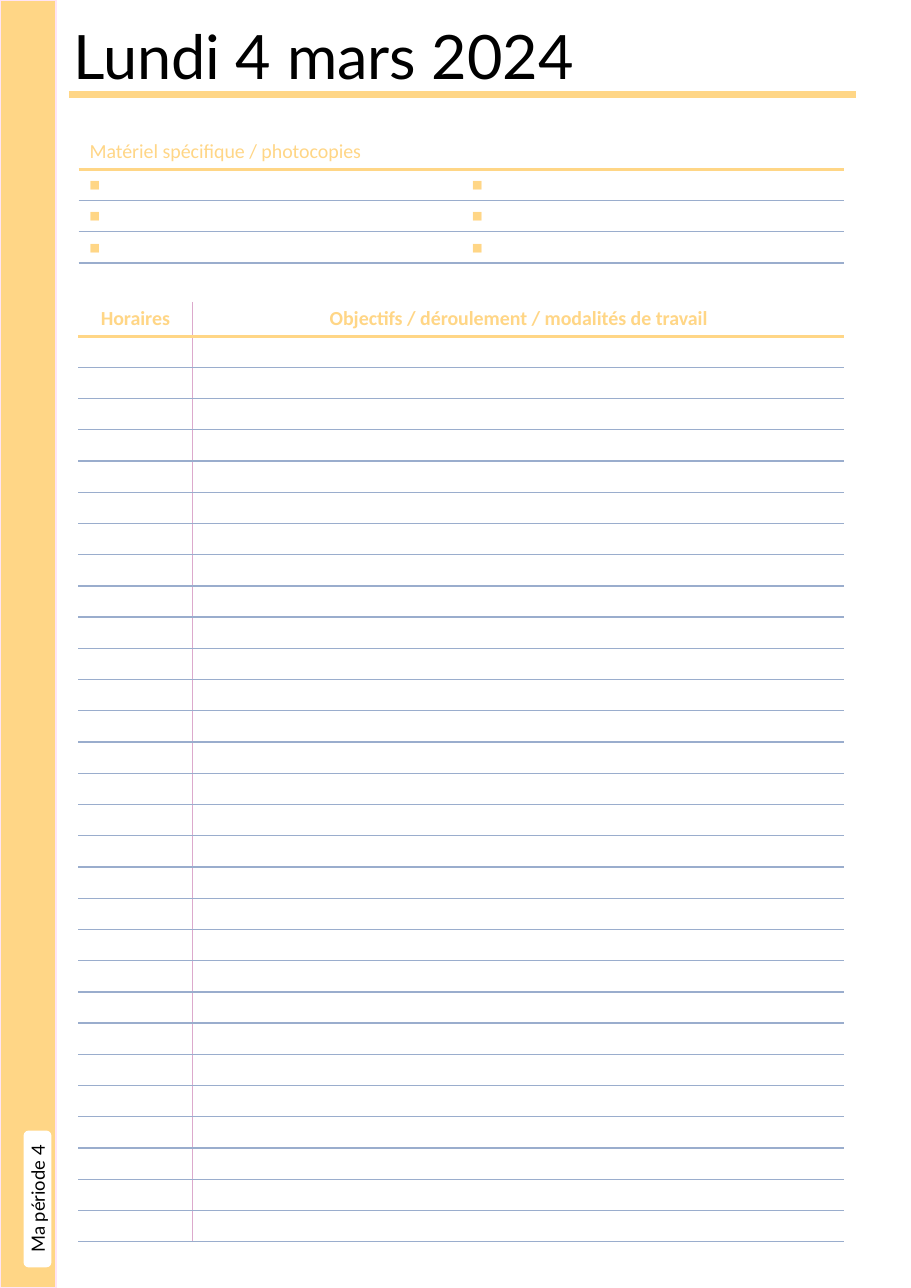
from lxml import etree
from pptx import Presentation
from pptx import util as u
from pptx.dml.color import RGBColor
from pptx.enum import shapes, text
from pptx.oxml import ns

COLORS = {
    "sand": "FFD686",
    "rule": "9AADCD",
    "margin": "DCA9CC",
    "blush": "FFE4F5",
    "white": "FFFFFF",
    "black": "000000",
}
HEADER_RULE = ("sand", 2.25)
ROW_RULE = ("rule", 1)
MARGIN_RULE = ("margin", 1)


def rgb(name):
    return RGBColor.from_string(COLORS[name])


class PlannerPage:
    def __init__(self, prs):
        self.s = prs.slides.add_slide(prs.slide_layouts[6])
        self.title_font = "Lato"
        self.table_font = "Calibri"

    def run(self, p, words, size, color, font, bold=False):
        r = p.add_run()
        r.text = words
        r.font.size = u.Pt(size)
        r.font.name = font
        r.font.bold = bold
        r.font.color.rgb = rgb(color)

    def title(self, words, *box):
        sp = self.s.shapes.add_textbox(*map(u.Pt, box))
        tf = sp.text_frame
        tf.word_wrap = True
        tf.auto_size = text.MSO_AUTO_SIZE.SHAPE_TO_FIT_TEXT
        self.run(tf.paragraphs[0], words, 40, "black", self.title_font)

    def line(self, x1, y1, x2, y2, color, width):
        cx = self.s.shapes.add_connector(
            shapes.MSO_CONNECTOR.STRAIGHT, *map(u.Pt, (x1, y1, x2, y2)))
        cx.line.color.rgb = rgb(color)
        cx.line.width = u.Pt(width)
        etree.SubElement(cx._element.spPr, ns.qn("a:effectLst"))

    def shape(self, kind, box, fill, line):
        sp = self.s.shapes.add_shape(kind, *map(u.Pt, box))
        sp.shadow.inherit = False
        sp.fill.solid()
        sp.fill.fore_color.rgb = rgb(fill)
        sp.line.color.rgb = rgb(line)
        sp.line.width = u.Pt(1)
        return sp

    def tab(self, words, box):
        sp = self.shape(shapes.MSO_SHAPE.ROUNDED_RECTANGLE, box, "white", "white")
        tf = sp.text_frame
        tf.margin_left = tf.margin_right = tf.margin_top = tf.margin_bottom = 0
        tf.vertical_anchor = text.MSO_ANCHOR.MIDDLE
        tf._txBody.bodyPr.set("vert", "vert270")
        p = tf.paragraphs[0]
        p.alignment = text.PP_ALIGN.CENTER
        self.run(p, words, 12, "black", self.title_font)

    def border(self, cell, side, style):
        tcPr = cell._tc.get_or_add_tcPr()
        ln = etree.SubElement(tcPr, ns.qn("a:ln" + side))
        if style is None:
            etree.SubElement(ln, ns.qn("a:noFill"))
            return
        color, width = style
        ln.set("w", str(u.Pt(width)))
        fill = etree.SubElement(ln, ns.qn("a:solidFill"))
        etree.SubElement(fill, ns.qn("a:srgbClr"), val=COLORS[color])

    def cell(self, cell, words, header, align, bold):
        cell.margin_top = cell.margin_bottom = 0
        cell.vertical_anchor = text.MSO_ANCHOR.MIDDLE
        cell.fill.solid()
        cell.fill.fore_color.rgb = rgb("white")
        p = cell.text_frame.paragraphs[0]
        p.alignment = align
        size = 13 if header else 11
        if words:
            self.run(p, words, size, "sand", self.table_font, bold and header)
        else:
            etree.SubElement(p._p, ns.qn("a:endParaRPr"), sz=str(size * 100))

    def table(self, rows, left, top, widths, header_height, row_height,
              divider=None, align=text.PP_ALIGN.LEFT, bold=False):
        height = header_height + row_height * (len(rows) - 1)
        frame = self.s.shapes.add_table(
            len(rows), len(widths),
            *map(u.Pt, (left, top, sum(widths), height)))
        tbl = frame.table
        tbl.first_row = tbl.horz_banding = False
        for col, width in zip(tbl.columns, widths):
            col.width = u.Pt(width)
        edges = [None, HEADER_RULE] + [ROW_RULE] * (len(rows) - 1)
        uprights = [None, divider, None]
        for i, row in enumerate(rows):
            tbl.rows[i].height = u.Pt(row_height if i else header_height)
            for j, words in enumerate(row):
                c = tbl.cell(i, j)
                sides = (uprights[j], uprights[j + 1], edges[i], edges[i + 1])
                for side, style in zip("LRTB", sides):
                    self.border(c, side, style)
                self.cell(c, words, i == 0, align, bold)


def main():
    prs = Presentation()
    prs.slide_width = u.Pt(595.44)
    prs.slide_height = u.Pt(841.68)
    page = PlannerPage(prs)

    page.title("Lundi 4 mars 2024", 41, 8.6, 527, 55.4)
    page.line(45.4, 61.9, 559.4, 61.9, "sand", 4.75)

    supplies = [["Matériel spécifique / photocopies", ""]] + [["◼︎", "◼︎"]] * 3
    page.table(supplies, 51.4, 87.8, [250, 250.4], 22.7, 20.5)

    schedule = [["Horaires", "Objectifs / déroulement / modalités de travail"]]
    schedule += [["", ""]] * 29
    page.table(schedule, 51, 197.2, [75, 425.8], 22.4, 20.42,
               divider=MARGIN_RULE, align=text.PP_ALIGN.CENTER, bold=True)

    page.shape(shapes.MSO_SHAPE.RECTANGLE, (0, 0, 36.7, 841.68), "sand", "blush")
    page.tab("Ma période 4", (15.9, 739.3, 17.2, 88.4))

    prs.save("out.pptx")


if __name__ == "__main__":
    main()
